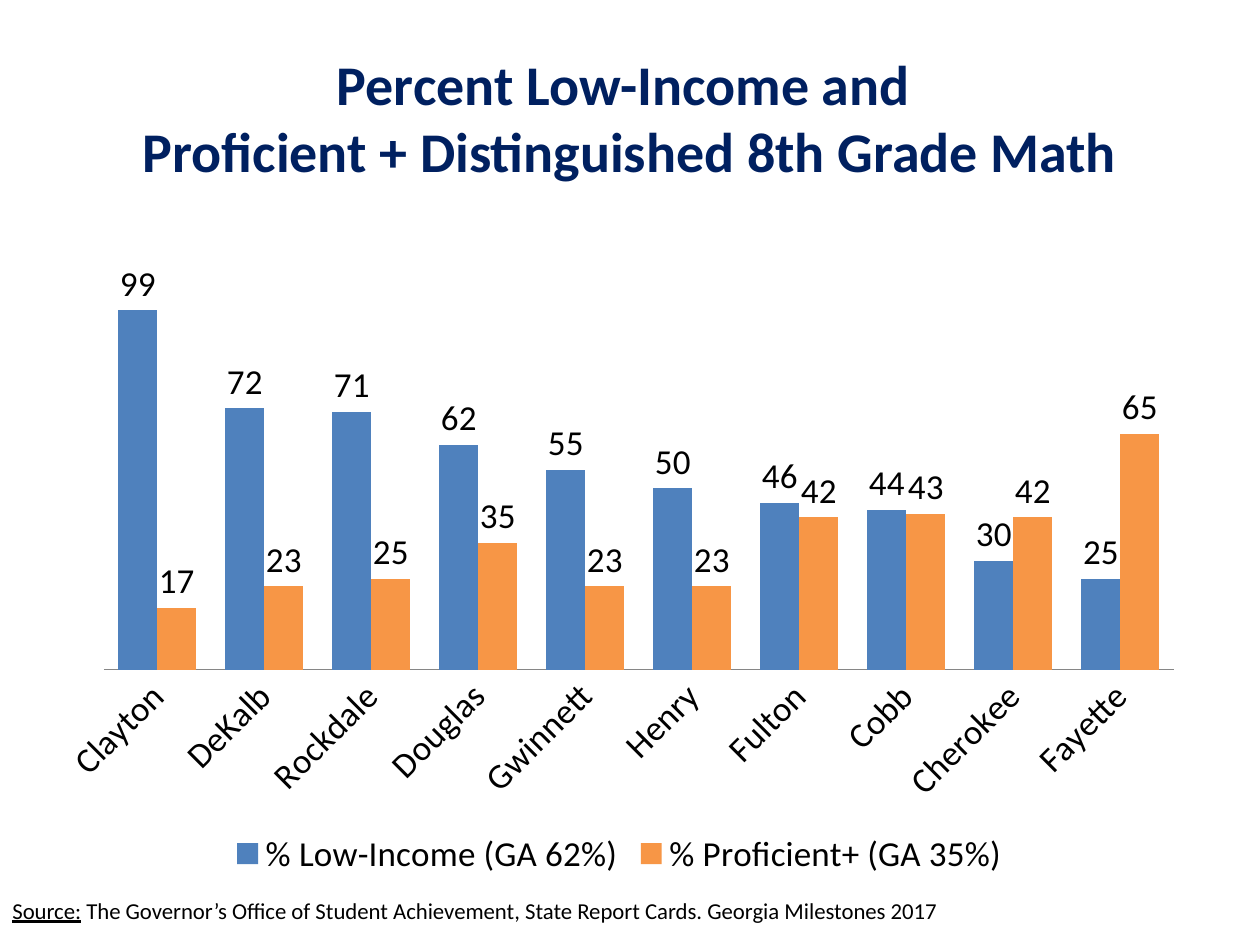
from dataclasses import dataclass

from pptx import Presentation
from pptx.chart.data import CategoryChartData
from pptx.dml.color import RGBColor
from pptx.enum.chart import XL_CHART_TYPE, XL_LABEL_POSITION, XL_LEGEND_POSITION, XL_TICK_MARK
from pptx.enum.text import MSO_ANCHOR, PP_ALIGN
from pptx.util import Cm, Pt


@dataclass(frozen=True)
class Theme:
    font: str = "Calibri"
    navy: str = "002060"
    black: str = "000000"
    gray: str = "868686"
    bars: tuple = ("4F81BD", "F79646")
    title: int = 32
    chart: int = 20
    note: int = 13


def color(code):
    return RGBColor.from_string(code)


def style(font, name, size, code, bold=False, under=False):
    font.name = name
    font.size = Pt(size)
    font.color.rgb = color(code)
    font.bold = bold
    font.underline = under


def write(para, text, **form):
    for at, line in enumerate(text.split("\n")):
        if at:
            para.add_line_break()
        run = para.add_run()
        run.text = line
        style(run.font, **form)


class Page:
    def __init__(self, slide, theme):
        self.slide = slide
        self.theme = theme

    def box(self, place, anchor):
        frame = self.slide.shapes.add_textbox(*map(Cm, place)).text_frame
        frame.word_wrap = True
        frame.vertical_anchor = anchor
        return frame.paragraphs[0]

    def title(self, text, place):
        look = self.theme
        para = self.box(place, MSO_ANCHOR.MIDDLE)
        para.alignment = PP_ALIGN.CENTER
        write(para, text, name=look.font, size=look.title, code=look.navy, bold=True)

    def source(self, label, text, place):
        look = self.theme
        para = self.box(place, MSO_ANCHOR.TOP)
        para.line_spacing = 0.6
        para.space_before = Pt(6.5)
        form = dict(name=look.font, size=look.note, code=look.black)
        write(para, label, under=True, **form)
        write(para, text, **form)

    def chart(self, names, series, place):
        look = self.theme
        data = CategoryChartData(number_format="0")
        data.categories = names
        for name, values in series.items():
            data.add_series(name, values)
        chart = self.slide.shapes.add_chart(
            XL_CHART_TYPE.COLUMN_CLUSTERED, *map(Cm, place), data
        ).chart
        style(chart.font, look.font, look.chart, look.black)
        chart.has_title = False
        chart.has_legend = True
        chart.legend.position = XL_LEGEND_POSITION.BOTTOM
        chart.legend.include_in_layout = False
        self.axes(chart)
        self.bars(chart.plots[0])

    def axes(self, chart):
        names, scale = chart.category_axis, chart.value_axis
        names.major_tick_mark = XL_TICK_MARK.NONE
        names.format.line.color.rgb = color(self.theme.gray)
        scale.visible = False
        scale.has_major_gridlines = False
        scale.minimum_scale = 0
        scale.maximum_scale = 120

    def bars(self, plot):
        plot.gap_width = 75
        plot.overlap = 0
        plot.vary_by_categories = False
        for series, code in zip(plot.series, self.theme.bars):
            series.format.fill.solid()
            series.format.fill.fore_color.rgb = color(code)
            labels = series.data_labels
            labels.show_value = True
            labels.number_format = "0"
            labels.number_format_is_linked = False
            labels.position = XL_LABEL_POSITION.OUTSIDE_END


def main():
    deck = Presentation()
    deck.slide_width, deck.slide_height = Cm(25.4), Cm(19.05)
    page = Page(deck.slides.add_slide(deck.slide_layouts[6]), Theme())
    page.title(
        "Percent Low-Income and \nProficient + Distinguished 8th Grade Math",
        (1.27, 0.76, 22.86, 3.18),
    )
    page.source(
        "Source:",
        " The Governor’s Office of Student Achievement, State Report Cards. "
        "Georgia Milestones 2017",
        (0, 18.14, 22.23, 0.64),
    )
    page.chart(
        ["Clayton", "DeKalb", "Rockdale", "Douglas", "Gwinnett",
         "Henry", "Fulton", "Cobb", "Cherokee", "Fayette"],
        {
            "% Low-Income (GA 62%)": (99, 72, 71, 62, 55, 50, 46, 44, 30, 25),
            "% Proficient+ (GA 35%)": (17, 23, 25, 35, 23, 23, 42, 43, 42, 65),
        },
        (0.84, 4.45, 23.29, 13.34),
    )
    deck.save("out.pptx")


if __name__ == "__main__":
    main()
